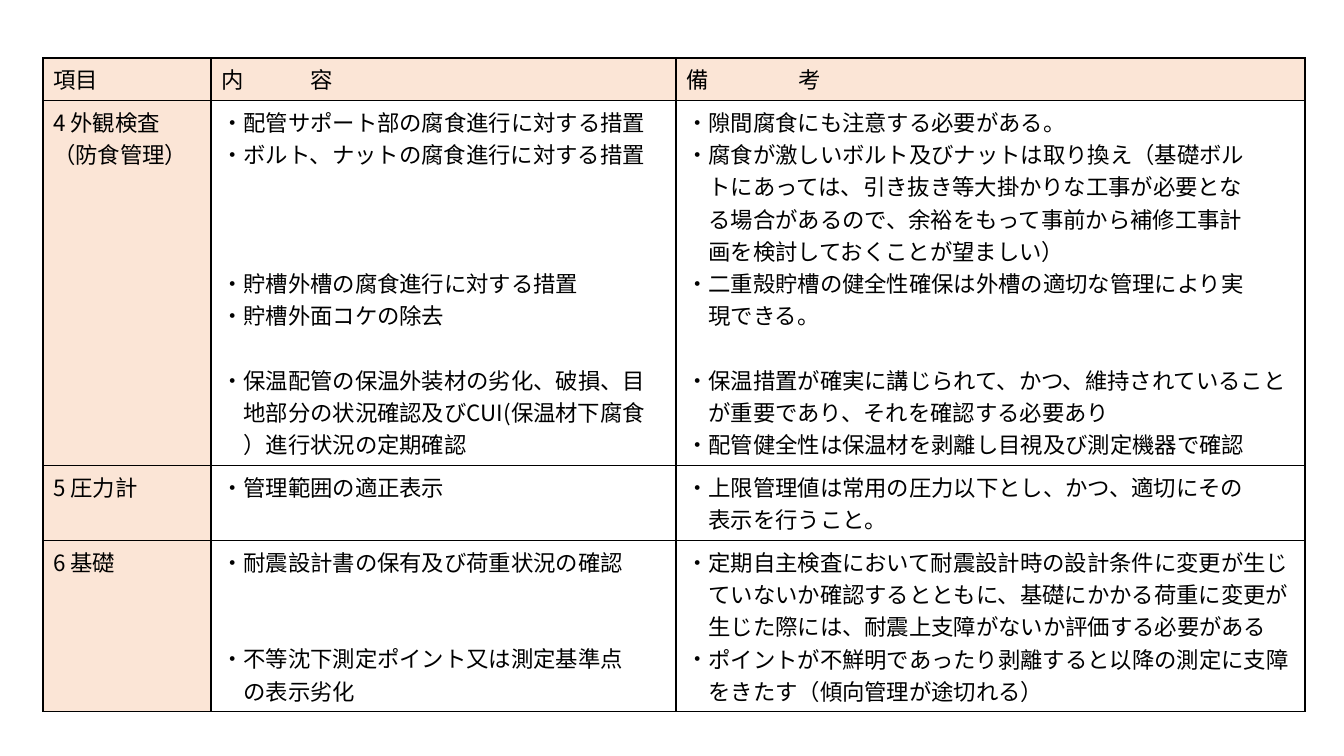
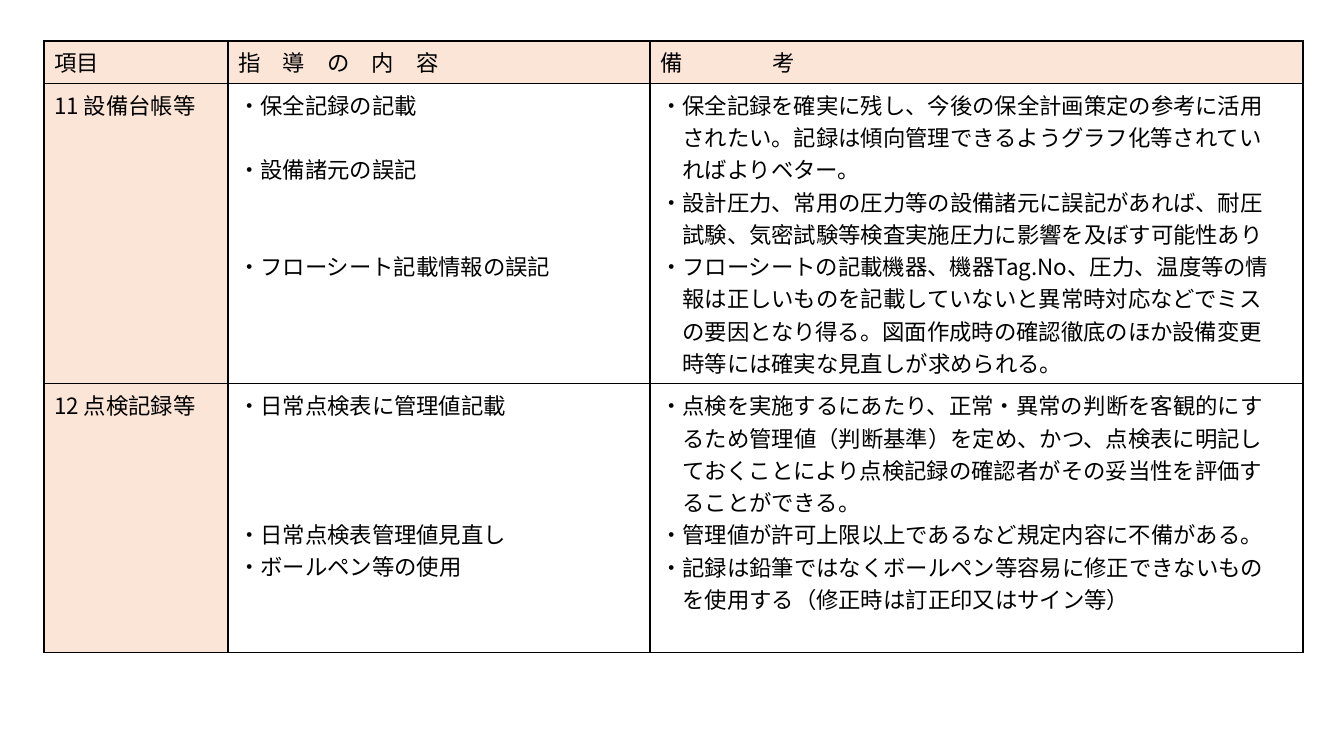
"""Build two slides of inspection guidance tables."""
import lxml.etree
import pptx
import pptx.dml.color
import pptx.enum.text
import pptx.oxml.ns
import pptx.util

SLIDE_WIDTH, SLIDE_HEIGHT = 1344, 756
EMU_PER_PX = 12192000 / SLIDE_WIDTH
FONT = "Noto Sans CJK JP"
FONT_SIZE = 16
LINE_HEIGHT = 23
INK = "000000"
PEACH = "FBE5D6"

TABLES = [
    {
        "at": (43, 58),
        "columns": (168, 465, 629),
        "row_heights": (42, 365, 75, 171),
        "headers": (("項目", 0), ("内\t容", 4), ("備\t考", 5)),
        "rows": [
            (
                ["4 外観検査", "（防食管理）"],
                [
                    (0, "配管サポート部の腐食進行に対する措置"),
                    (0, "ボルト、ナットの腐食進行に対する措置"),
                    (3, "貯槽外槽の腐食進行に対する措置"),
                    (0, "貯槽外面コケの除去"),
                    (1, "保温配管の保温外装材の劣化、破損、目\n"
                        "地部分の状況確認及びCUI(保温材下腐食\n"
                        "）進行状況の定期確認"),
                ],
                [
                    (0, "隙間腐食にも注意する必要がある。"),
                    (0, "腐食が激しいボルト及びナットは取り換え（基礎ボル\n"
                        "トにあっては、引き抜き等大掛かりな工事が必要とな\n"
                        "る場合があるので、余裕をもって事前から補修工事計\n"
                        "画を検討しておくことが望ましい）"),
                    (0, "二重殻貯槽の健全性確保は外槽の適切な管理により実\n"
                        "現できる。"),
                    (1, "保温措置が確実に講じられて、かつ、維持されていること\n"
                        "が重要であり、それを確認する必要あり"),
                    (0, "配管健全性は保温材を剥離し目視及び測定機器で確認"),
                ],
            ),
            (
                ["5 圧力計"],
                [(0, "管理範囲の適正表示")],
                [(0, "上限管理値は常用の圧力以下とし、かつ、適切にその\n"
                     "表示を行うこと。")],
            ),
            (
                ["6 基礎"],
                [
                    (0, "耐震設計書の保有及び荷重状況の確認"),
                    (2, "不等沈下測定ポイント又は測定基準点\n"
                        "の表示劣化"),
                ],
                [
                    (0, "定期自主検査において耐震設計時の設計条件に変更が生じ\n"
                        "ていないか確認するとともに、基礎にかかる荷重に変更が\n"
                        "生じた際には、耐震上支障がないか評価する必要がある"),
                    (0, "ポイントが不鮮明であったり剥離すると以降の測定に支障\n"
                        "をきたす（傾向管理が途切れる）"),
                ],
            ),
        ],
    },
    {
        "at": (44, 41),
        "columns": (184, 422, 653),
        "row_heights": (42, 300, 269),
        "headers": (("項目", 0), ("指　導　の　内　容", 0), ("備\t考", 5)),
        "rows": [
            (
                ["11 設備台帳等"],
                [
                    (0, "保全記録の記載"),
                    (1, "設備諸元の誤記"),
                    (2, "フローシート記載情報の誤記"),
                ],
                [
                    (0, "保全記録を確実に残し、今後の保全計画策定の参考に活用\n"
                        "されたい。記録は傾向管理できるようグラフ化等されてい\n"
                        "ればよりベター。"),
                    (0, "設計圧力、常用の圧力等の設備諸元に誤記があれば、耐圧\n"
                        "試験、気密試験等検査実施圧力に影響を及ぼす可能性あり"),
                    (0, "フローシートの記載機器、機器Tag.No、圧力、温度等の情\n"
                        "報は正しいものを記載していないと異常時対応などでミス\n"
                        "の要因となり得る。図面作成時の確認徹底のほか設備変更\n"
                        "時等には確実な見直しが求められる。"),
                ],
            ),
            (
                ["12 点検記録等"],
                [
                    (0, "日常点検表に管理値記載"),
                    (3, "日常点検表管理値見直し"),
                    (0, "ボールペン等の使用"),
                ],
                [
                    (0, "点検を実施するにあたり、正常・異常の判断を客観的にす\n"
                        "るため管理値（判断基準）を定め、かつ、点検表に明記し\n"
                        "ておくことにより点検記録の確認者がその妥当性を評価す\n"
                        "ることができる。"),
                    (0, "管理値が許可上限以上であるなど規定内容に不備がある。"),
                    (0, "記録は鉛筆ではなくボールペン等容易に修正できないもの\n"
                        "を使用する（修正時は訂正印又はサイン等）"),
                ],
            ),
        ],
    },
]


def px(length):
    return pptx.util.Emu(round(length * EMU_PER_PX))


def color(value):
    return pptx.dml.color.RGBColor.from_string(value)


def add_xml(parent, tag, **attributes):
    return lxml.etree.SubElement(parent, pptx.oxml.ns.qn(tag), attributes)


def style_cell(cell, fill):
    properties = cell._tc.get_or_add_tcPr()
    for side in ("a:lnL", "a:lnR", "a:lnT", "a:lnB"):
        line = add_xml(properties, side, w=str(pptx.util.Pt(1)))
        add_xml(add_xml(line, "a:solidFill"), "a:srgbClr", val=INK)
    if fill:
        cell.fill.solid()
        cell.fill.fore_color.rgb = color(fill)
    else:
        cell.fill.background()


def write_paragraph(paragraph, text, gap_lines=0, bullet=False, tab_ems=0):
    paragraph.text = text
    properties = paragraph._p.get_or_add_pPr()
    em = pptx.util.Pt(FONT_SIZE)
    if bullet:
        properties.set("marL", str(em))
        properties.set("indent", str(-em))
        add_xml(properties, "a:buFont", typeface=FONT)
        add_xml(properties, "a:buChar", char="・")
    if tab_ems:
        tabs = add_xml(properties, "a:tabLst")
        add_xml(tabs, "a:tab", pos=str(tab_ems * em), algn="l")
    if gap_lines:
        paragraph.space_before = pptx.util.Pt(gap_lines * LINE_HEIGHT)
    paragraph.font.size = em
    paragraph.font.color.rgb = color(INK)
    paragraph.font.name = FONT
    defaults = properties.find(pptx.oxml.ns.qn("a:defRPr"))
    add_xml(defaults, "a:ea", typeface=FONT)


def fill_body_cell(cell, items, is_label):
    style_cell(cell, PEACH if is_label else None)
    frame = cell.text_frame
    for index, item in enumerate(items):
        paragraph = frame.add_paragraph() if index else frame.paragraphs[0]
        if is_label:
            write_paragraph(paragraph, item)
        else:
            gap_lines, text = item
            write_paragraph(paragraph, text, gap_lines, bullet=True)


def add_guidance_table(slide, content):
    columns, heights = content["columns"], content["row_heights"]
    left, top = content["at"]
    frame = slide.shapes.add_table(
        len(heights), len(columns),
        px(left), px(top), px(sum(columns)), px(sum(heights)))
    table = frame.table
    table.first_row = table.horz_banding = False
    for column, width in zip(table.columns, columns):
        column.width = px(width)
    for row, height in zip(table.rows, heights):
        row.height = px(height)
    for column_index, (text, tab_ems) in enumerate(content["headers"]):
        cell = table.cell(0, column_index)
        style_cell(cell, PEACH)
        cell.vertical_anchor = pptx.enum.text.MSO_ANCHOR.MIDDLE
        write_paragraph(cell.text_frame.paragraphs[0], text, tab_ems=tab_ems)
    for row_index, row in enumerate(content["rows"], 1):
        for column_index, items in enumerate(row):
            fill_body_cell(table.cell(row_index, column_index), items, column_index == 0)


def main():
    presentation = pptx.Presentation()
    presentation.slide_width = px(SLIDE_WIDTH)
    presentation.slide_height = px(SLIDE_HEIGHT)
    for content in TABLES:
        slide = presentation.slides.add_slide(presentation.slide_layouts[6])
        add_guidance_table(slide, content)
    presentation.save("out.pptx")


if __name__ == "__main__":
    main()
